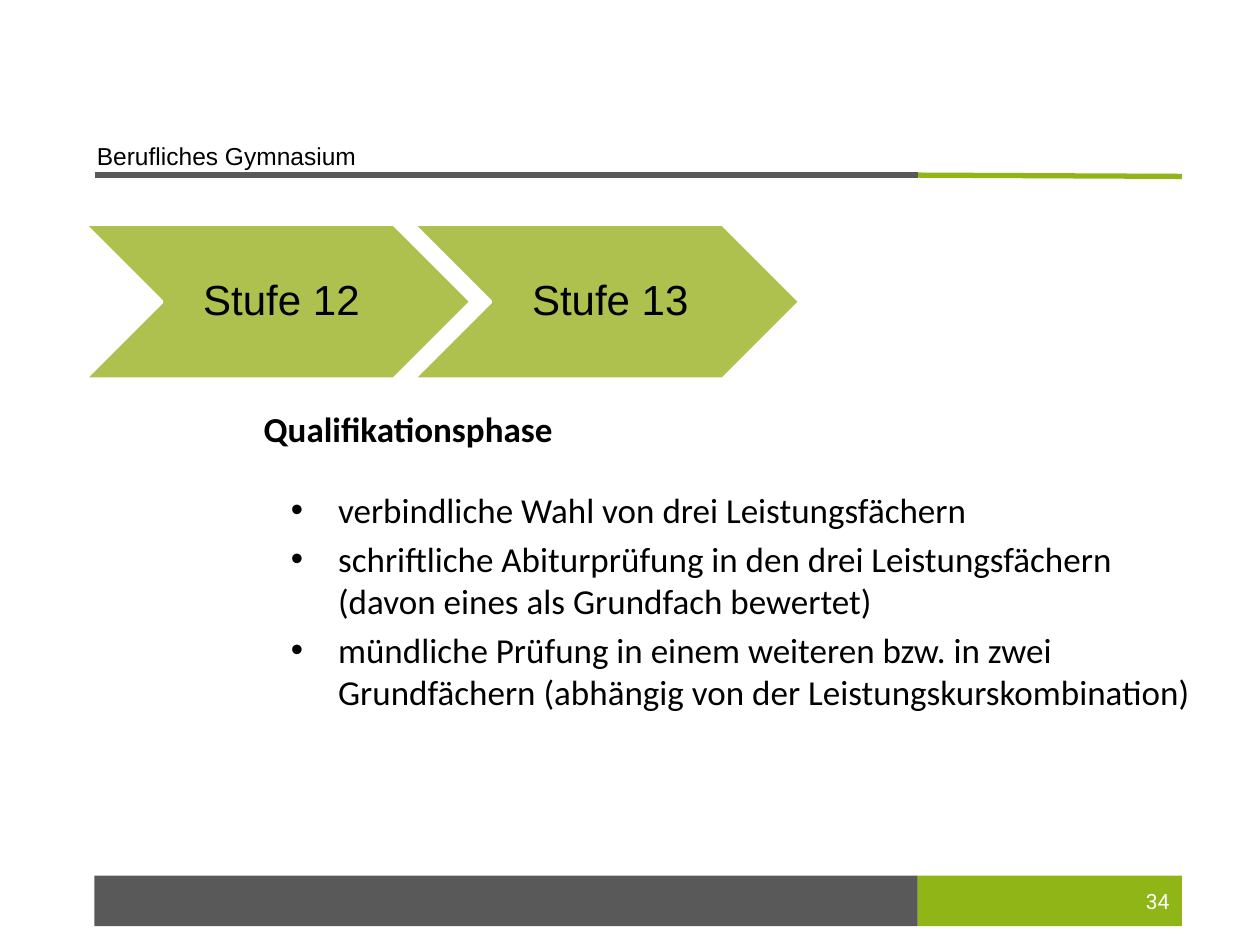
"""Build the slide on the qualification phase of the vocational grammar school."""
from lxml import etree
from pptx import Presentation
from pptx.dml.color import RGBColor
from pptx.enum.shapes import MSO_CONNECTOR, MSO_SHAPE
from pptx.enum.text import MSO_ANCHOR, PP_ALIGN
from pptx.oxml.ns import qn
from pptx.util import Inches, Pt

STRAIGHT = MSO_CONNECTOR.STRAIGHT
CHEVRON, RECT = MSO_SHAPE.CHEVRON, MSO_SHAPE.RECTANGLE
TOP, MIDDLE = MSO_ANCHOR.TOP, MSO_ANCHOR.MIDDLE
LEFT, CENTER, RIGHT = PP_ALIGN.LEFT, PP_ALIGN.CENTER, PP_ALIGN.RIGHT

COLORS = {"gray": "595959", "green": "8FB616", "light": "AEC14F",
          "black": "000000", "white": "FFFFFF"}
COLS, ROWS = 100, 75
UNIT = Inches(10) // COLS
SPLIT = 0.757


def grid(*cells):
    """Turn grid columns or rows into whole EMU lengths."""
    return [round(c * UNIT) for c in cells]


def color(name):
    """Look up a named colour."""
    return RGBColor.from_string(COLORS[name])


def add_run(p, text, size, font, fill="black", bold=False):
    """Append a formatted run to a paragraph."""
    r = p.add_run()
    r.text = text
    r.font.size, r.font.name, r.font.bold = Pt(size), font, bold
    r.font.color.rgb = color(fill)


def add_box(s, box, anchor=TOP):
    """Add a wrapping text box and return its text frame."""
    tf = s.shapes.add_textbox(*grid(*box)).text_frame
    tf.word_wrap, tf.vertical_anchor = True, anchor
    return tf


def add_filled(s, kind, box, fill):
    """Add a flat filled preset shape without an outline."""
    sp = s.shapes.add_shape(kind, *grid(*box))
    sp.shadow.inherit = False
    sp.fill.solid()
    sp.fill.fore_color.rgb = color(fill)
    sp.line.fill.background()
    return sp


def add_rule(s, start, end, fill):
    """Draw a straight rule between two grid points."""
    c = s.shapes.add_connector(STRAIGHT, *grid(*start, *end))
    c.line.color.rgb, c.line.width = color(fill), Pt(3)
    etree.SubElement(c._element.spPr, qn("a:effectLst"))


def add_header(s, box, title):
    """Place the section title above a two-coloured rule."""
    x, y, w, h = box
    mid, base = x + w * SPLIT, y + h
    add_rule(s, (mid, base), (x + w, base + 0.1), "green")
    add_rule(s, (x, base), (mid, base), "gray")
    tf = add_box(s, (x - 0.8, y, w * SPLIT + 0.8, h))
    add_run(tf.paragraphs[0], title, 14, "Arial")


def add_steps(s, box, labels):
    """Spread overlapping chevrons evenly over the box."""
    x, y, w, h = box
    overlap = 0.15
    width = w / (len(labels) - overlap * (len(labels) - 1))
    for i, label in enumerate(labels):
        left = x + i * width * (1 - overlap)
        sp = add_filled(s, CHEVRON, (left, y, width, h), "light")
        sp.line.color.rgb, sp.line.width = color("white"), Pt(2)
        tf = sp.text_frame
        tf.vertical_anchor = MIDDLE
        tf.margin_left, tf.margin_right, tf.margin_top, tf.margin_bottom = grid(1, 0.4, 0.4, 0.4)
        p = tf.paragraphs[0]
        p.alignment, p.line_spacing = CENTER, 0.9
        add_run(p, label, 24, "Arial")


def add_heading(s, box, text):
    """Centre a bold heading in the box."""
    p = add_box(s, box, MIDDLE).paragraphs[0]
    p.alignment = CENTER
    add_run(p, text, 20, "Calibri", bold=True)


def add_bullets(s, box, items):
    """Fill the box with a bulleted list."""
    tf = add_box(s, box)
    indent, = grid(3.75)
    for i, item in enumerate(items):
        p = tf.add_paragraph() if i else tf.paragraphs[0]
        pPr = p._p.get_or_add_pPr()
        pPr.set("marL", str(indent))
        pPr.set("indent", str(-indent))
        etree.SubElement(pPr, qn("a:buFont"), typeface="Arial")
        etree.SubElement(pPr, qn("a:buChar"), char="•")
        p.alignment, p.space_before = LEFT, Pt(4 if i else 0)
        add_run(p, item, 20, "Calibri")


def add_footer(s, box, number):
    """Place the two-coloured footer bar with the slide number."""
    x, y, w, h = box
    mid = w * SPLIT
    sp = add_filled(s, RECT, (x + mid, y, w - mid, h), "green")
    sp.text_frame.vertical_anchor = MIDDLE
    p = sp.text_frame.paragraphs[0]
    p.alignment = RIGHT
    add_run(p, number, 12, "Roboto", "white")
    add_filled(s, RECT, (x, y, mid, h), "gray")


def main():
    """Build and save the slide."""
    prs = Presentation()
    prs.slide_width, prs.slide_height = COLS * UNIT, ROWS * UNIT
    s = prs.slides.add_slide(prs.slide_layouts[6])
    add_header(s, (7.5, 10.7, 86.3, 3.2), "Berufliches Gymnasium")
    add_steps(s, (6.7, 17.8, 56.8, 12.3), ["Stufe 12", "Stufe 13"])
    add_heading(s, (7.5, 32.1, 49.8, 3.8), "Qualifikationsphase")
    add_bullets(s, (22.1, 38.3, 75.1, 22.8), [
        "verbindliche Wahl von drei Leistungsfächern",
        "schriftliche Abiturprüfung in den drei Leistungsfächern (davon eines als Grundfach bewertet)",
        "mündliche Prüfung in einem weiteren bzw. in zwei Grundfächern "
        "(abhängig von der Leistungskurskombination)",
    ])
    add_footer(s, (7.5, 69.5, 86.3, 4), "34")
    prs.save("out.pptx")


if __name__ == "__main__":
    main()
